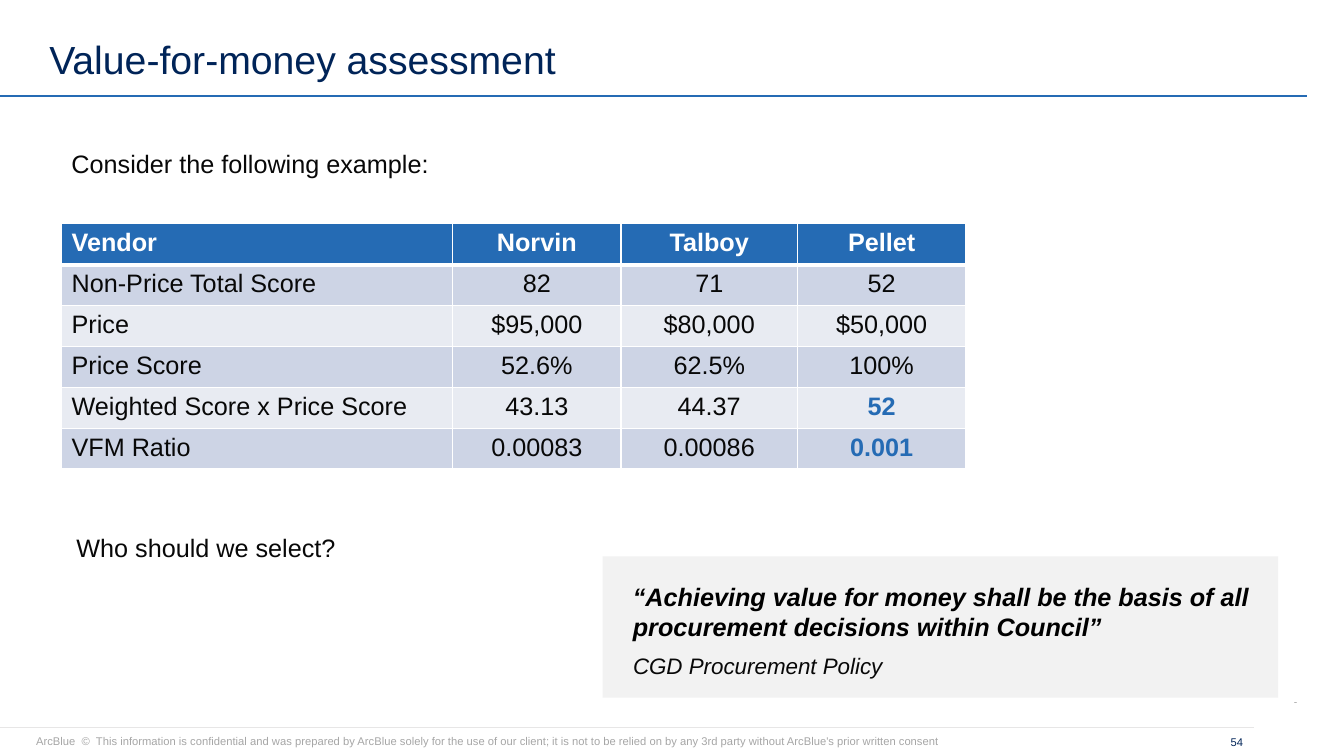
"""Build the value-for-money assessment slide."""
import pptx
import pptx.util
import pptx.dml.color
import pptx.enum.shapes
import pptx.enum.text
import pptx.oxml
import pptx.oxml.ns

WIDTH, HEIGHT = 13.33, 7.5
FONT = "Arial"
COLOURS = {
    "navy": "002458", "blue": "256BB4", "ink": "080808", "black": "000000",
    "white": "FFFFFF", "panel": "F2F2F2", "rule": "E7E6E6", "footer": "A6A6A6",
    "odd": "CDD4E5", "even": "E8EBF2",
}
ALIGN = pptx.enum.text.PP_ALIGN
ANCHOR = pptx.enum.text.MSO_ANCHOR
INSETS = (0.1, 0.05, 0.1, 0.05)

# Boxes are left, top, width and height in percent of the slide.
PANEL = (44.85, 73.6, 50.25, 18.67)
RULES = [(96.27, 93.3, "rule", 0.75), (12.67, 97.28, "blue", 1.5)]
TEXTS = [
    dict(text="TAG", box=(96.3, 92.93, 0.23, 0.27), size=1, colour="ink",
         insets=(0, 0, 0, 0), wrap=False),
    dict(text="ArcBlue  ©  This information is confidential and was prepared by ArcBlue "
              "solely for the use of our client; it is not to be relied on by any 3rd party "
              "without ArcBlue's prior written consent",
         box=(1.95, 96.53, 70.2, 3.2), size=8, colour="footer"),
    dict(text="54", box=(89.4, 96.53, 3.83, 3.2), size=8, colour="navy",
         align=ALIGN.RIGHT, anchor=ANCHOR.MIDDLE),
    dict(text="Value-for-money assessment", box=(2.93, 0, 94.2, 11.6), size=28,
         colour="navy", anchor=ANCHOR.BOTTOM, spacing=0.9),
    dict(text="Consider the following example:", box=(4.58, 18.93, 28.35, 5.33),
         size=18, colour="ink", wrap=False),
    dict(text="Who should we select?", box=(4.95, 69.73, 21, 5.33),
         size=18, colour="ink", wrap=False),
    dict(text="“Achieving value for money shall be the basis of all procurement "
              "decisions within Council”",
         box=(46.35, 76.27, 50.03, 9.47), size=18, colour="black", bold=True, italic=True),
    dict(text="CGD Procurement Policy", box=(46.8, 85.73, 30.83, 4.67), size=16,
         colour="ink", italic=True, insets=(0.04, 0.04, 0.04, 0.04)),
]
TABLE_LEFT, TABLE_TOP, ROW_SHARE = 4.58, 29.6, 5.41
COLUMN_SHARES = [29.1, 12.53, 13.13, 12.53]
SCORES = [
    ("Vendor", "Norvin", "Talboy", "Pellet"),
    ("Non-Price Total Score", "82", "71", "52"),
    ("Price", "$95,000", "$80,000", "$50,000"),
    ("Price Score", "52.6%", "62.5%", "100%"),
    ("Weighted Score x Price Score", "43.13", "44.37", "52"),
    ("VFM Ratio", "0.00083", "0.00086", "0.001"),
]
WINNERS = {(4, 3), (5, 3)}


def across(share):
    return pptx.util.Inches(WIDTH * share / 100)


def down(share):
    return pptx.util.Inches(HEIGHT * share / 100)


def place(box):
    left, top, width, height = box
    return across(left), down(top), across(width), down(height)


def rgb(name):
    return pptx.dml.color.RGBColor.from_string(COLOURS[name])


def write(paragraph, text, size, colour, bold=False, italic=False):
    run = paragraph.add_run()
    run.text = text
    font = run.font
    font.name, font.size = FONT, pptx.util.Pt(size)
    font.bold, font.italic = bold, italic
    font.color.rgb = rgb(colour)


def add_text(slide, text, box, size, colour, bold=False, italic=False, align=ALIGN.LEFT,
             anchor=ANCHOR.TOP, insets=INSETS, wrap=True, spacing=None):
    frame = slide.shapes.add_textbox(*place(box)).text_frame
    frame.word_wrap, frame.vertical_anchor = wrap, anchor
    (frame.margin_left, frame.margin_top,
     frame.margin_right, frame.margin_bottom) = map(pptx.util.Inches, insets)
    paragraph = frame.paragraphs[0]
    paragraph.alignment = align
    if spacing:
        paragraph.line_spacing = spacing
    write(paragraph, text, size, colour, bold, italic)


def add_rule(slide, top, right, colour, weight):
    rule = slide.shapes.add_connector(
        pptx.enum.shapes.MSO_CONNECTOR.STRAIGHT, 0, down(top), across(right), down(top))
    rule.line.color.rgb = rgb(colour)
    rule.line.width = pptx.util.Pt(weight)
    properties = rule._element.spPr
    properties.append(pptx.oxml.parse_xml(
        f'<a:effectLst {pptx.oxml.ns.nsdecls("a")}/>'))


def add_borders(cell, row):
    properties = cell._tc.get_or_add_tcPr()
    weights = {"L": 1, "R": 1, "T": 3 if row == 1 else 1, "B": 3 if row == 0 else 1}
    for position, (side, weight) in enumerate(weights.items()):
        properties.insert(position, pptx.oxml.parse_xml(
            f'<a:ln{side} {pptx.oxml.ns.nsdecls("a")} w="{pptx.util.Pt(weight)}">'
            f'<a:solidFill><a:srgbClr val="{COLOURS["white"]}"/></a:solidFill></a:ln{side}>'))


def add_scores(slide):
    box = (TABLE_LEFT, TABLE_TOP, sum(COLUMN_SHARES), ROW_SHARE * len(SCORES))
    table = slide.shapes.add_table(len(SCORES), len(COLUMN_SHARES), *place(box)).table
    for column, share in zip(table.columns, COLUMN_SHARES):
        column.width = across(share)
    for row, values in enumerate(SCORES):
        table.rows[row].height = down(ROW_SHARE)
        fill = "blue" if row == 0 else "odd" if row % 2 else "even"
        for column, value in enumerate(values):
            cell = table.cell(row, column)
            cell.fill.solid()
            cell.fill.fore_color.rgb = rgb(fill)
            add_borders(cell, row)
            winner = (row, column) in WINNERS
            colour = "white" if row == 0 else "blue" if winner else "ink"
            paragraph = cell.text_frame.paragraphs[0]
            paragraph.alignment = ALIGN.CENTER if column else ALIGN.LEFT
            write(paragraph, value, 18, colour, bold=row == 0 or winner)


def main():
    presentation = pptx.Presentation()
    presentation.slide_width = pptx.util.Inches(WIDTH)
    presentation.slide_height = pptx.util.Inches(HEIGHT)
    slide = presentation.slides.add_slide(presentation.slide_layouts[6])
    for rule in RULES:
        add_rule(slide, *rule)
    panel = slide.shapes.add_shape(
        pptx.enum.shapes.MSO_SHAPE.RECTANGLE, *place(PANEL))
    panel.shadow.inherit = False
    panel.fill.solid()
    panel.fill.fore_color.rgb = rgb("panel")
    panel.line.fill.background()
    for text in TEXTS:
        add_text(slide, **text)
    add_scores(slide)
    presentation.save("out.pptx")


if __name__ == "__main__":
    main()
